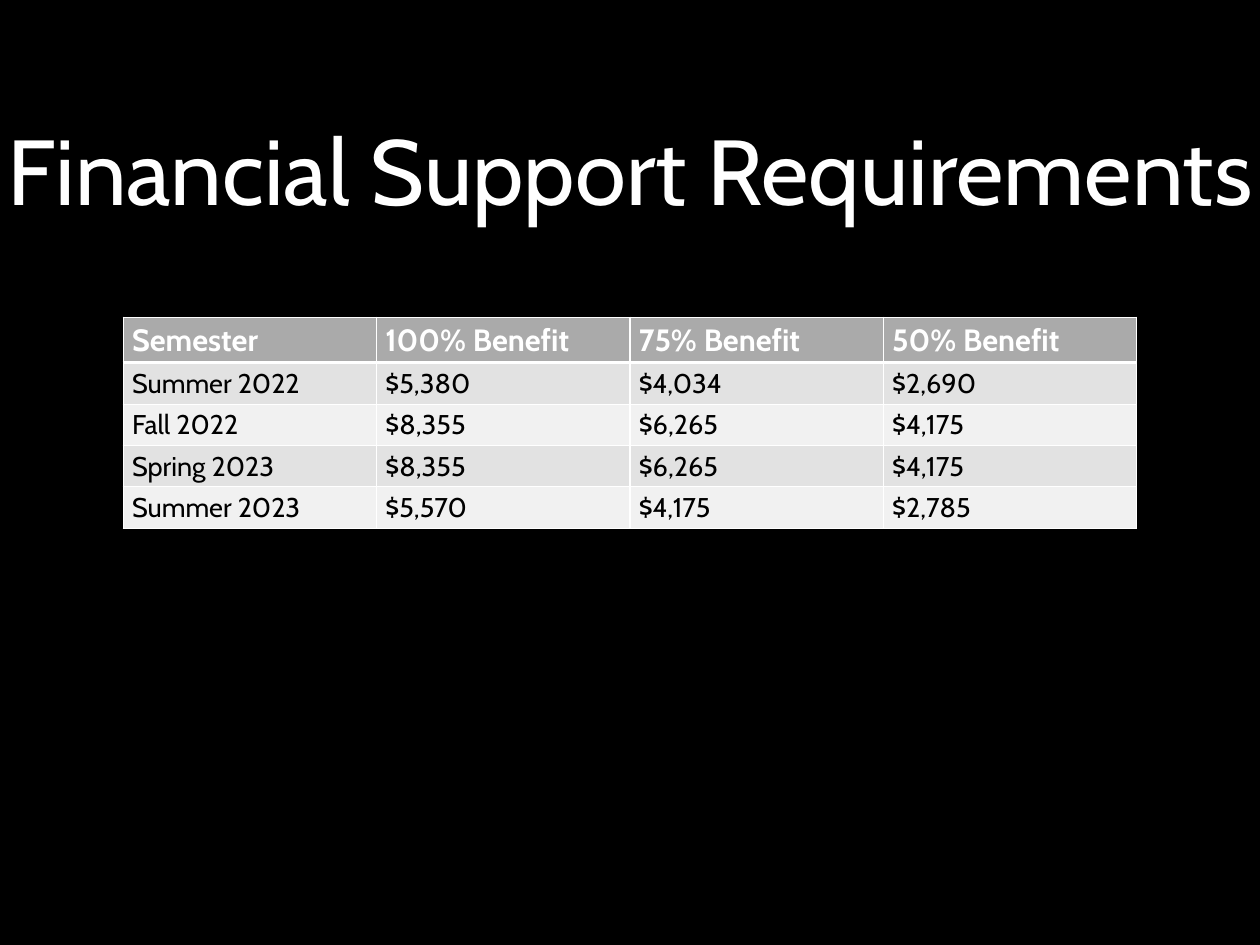
from pptx import Presentation
from pptx.dml.color import RGBColor
from pptx.enum.text import MSO_ANCHOR, PP_ALIGN
from pptx.oxml import parse_xml
from pptx.oxml.ns import nsdecls
from pptx.util import Inches, Pt

CENTER = PP_ALIGN.CENTER
MIDDLE = MSO_ANCHOR.MIDDLE

SLIDE_W, SLIDE_H = Inches(14.22), Inches(10.67)
COLUMN_W, ROW_H = Inches(2.86), Inches(0.41)
TABLE_TOP, TABLE_H = Inches(3.58), Inches(2.38)
TITLE_TOP, TITLE_H = Inches(0.86), Inches(2.08)
TITLE_INSET = Inches(0.06)
RULE_PT, HEADER_RULE_PT = 1, 3

COLORS = {
    "background": "000000",
    "light_text": "FFFFFF",
    "dark_text": "000000",
    "rule": "FFFFFF",
    "header": "AAAAAA",
    "odd_row": "E2E2E2",
    "even_row": "F1F1F1",
}
TITLE_FONT = {"name": "Cabin", "size": Pt(75), "bold": False}
HEADER_FONT = {"name": "Cabin", "size": Pt(25), "bold": True}
BODY_FONT = {"name": "Cabin", "size": Pt(22), "bold": False}

REQUIREMENTS = [
    ("Semester", "100% Benefit", "75% Benefit", "50% Benefit"),
    ("Summer 2022", "$5,380", "$4,034", "$2,690"),
    ("Fall 2022", "$8,355", "$6,265", "$4,175"),
    ("Spring 2023", "$8,355", "$6,265", "$4,175"),
    ("Summer 2023", "$5,570", "$4,175", "$2,785"),
]


def rgb(role):
    return RGBColor.from_string(COLORS[role])


def write(text_frame, wording, font_format, color):
    paragraph = text_frame.paragraphs[0]
    run = paragraph.add_run()
    run.text = wording
    for attribute, value in font_format.items():
        setattr(run.font, attribute, value)
    run.font.color.rgb = rgb(color)
    return paragraph


def add_title(slide, wording):
    title = slide.shapes.add_textbox(0, TITLE_TOP, SLIDE_W, TITLE_H).text_frame
    for side in ("left", "top", "right", "bottom"):
        setattr(title, f"margin_{side}", TITLE_INSET)
    title.word_wrap = False
    title.vertical_anchor = MIDDLE
    write(title, wording, TITLE_FONT, "light_text").alignment = CENTER


def set_borders(cell, widths):
    """Draw the cell's left, right, top and bottom rules, widths in points."""
    properties = cell._tc.get_or_add_tcPr()
    for side, width in zip("LRTB", widths):
        properties.append(parse_xml(
            f'<a:ln{side} {nsdecls("a")} w="{Pt(width)}"><a:solidFill>'
            f'<a:srgbClr val="{COLORS["rule"]}"/></a:solidFill></a:ln{side}>'))


def style_cell(cell, row, wording):
    if row == 0:
        fill, font_format, color = "header", HEADER_FONT, "light_text"
    else:
        fill = "odd_row" if row % 2 else "even_row"
        font_format, color = BODY_FONT, "dark_text"
    top = HEADER_RULE_PT if row == 1 else RULE_PT
    bottom = HEADER_RULE_PT if row == 0 else RULE_PT
    set_borders(cell, (RULE_PT, RULE_PT, top, bottom))
    cell.fill.solid()
    cell.fill.fore_color.rgb = rgb(fill)
    write(cell.text_frame, wording, font_format, color)


def add_requirements_table(slide, rows):
    width = COLUMN_W * len(rows[0])
    frame = slide.shapes.add_table(len(rows), len(rows[0]), (SLIDE_W - width) // 2,
                                   TABLE_TOP, width, TABLE_H)
    for table_row in frame.table.rows:
        table_row.height = ROW_H
    frame.height = TABLE_H
    for row, entries in enumerate(rows):
        for column, wording in enumerate(entries):
            style_cell(frame.table.cell(row, column), row, wording)


def main():
    deck = Presentation()
    deck.slide_width, deck.slide_height = SLIDE_W, SLIDE_H
    slide = deck.slides.add_slide(deck.slide_layouts[6])
    slide.background.fill.solid()
    slide.background.fill.fore_color.rgb = rgb("background")
    add_title(slide, "Financial Support Requirements")
    add_requirements_table(slide, REQUIREMENTS)
    deck.save("out.pptx")


if __name__ == "__main__":
    main()
